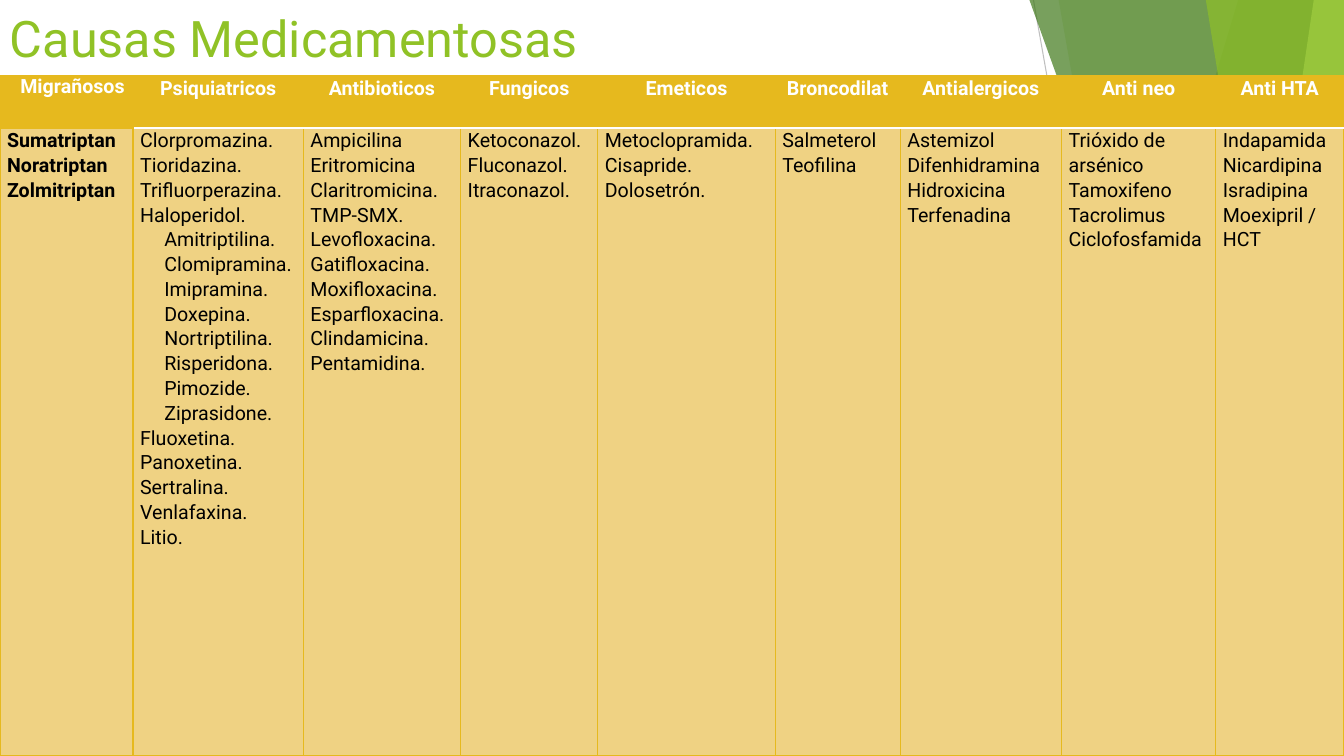
import pptx
import pptx.dml.color
import pptx.enum.shapes
import pptx.enum.text
import pptx.oxml
import pptx.oxml.ns
import pptx.util
from pptx.util import Inches

FONT = "Roboto"
GREEN, GOLD, PALE_GOLD, WHITE, BLACK = "90C226", "E6B91E", "EFD283", "FFFFFF", "000000"
SLIDE_WIDTH, SLIDE_HEIGHT = 13.33, 7.5
INDENTED = range(4, 12)

BANDS = [
    (12.28, 10.04, "90C226", 30),
    (10.5, 11.83, "90C226", 20),
    (10.21, 12.91, "3F7819", 70),
    (13.03, 11.92, "C0E474", 70),
    (11.96, 13.18, "90C226", 65),
]

COLUMNS = [
    ("Migrañosos", 1.32, ["Sumatriptan", "Noratriptan", "Zolmitriptan"]),
    ("Psiquiatricos", 1.69, [
        "Clorpromazina.", "Tioridazina.", "Trifluorperazina.", "Haloperidol.",
        "Amitriptilina.", "Clomipramina.", "Imipramina.", "Doxepina.",
        "Nortriptilina.", "Risperidona.", "Pimozide.", "Ziprasidone.",
        "Fluoxetina.", "Panoxetina.", "Sertralina.", "Venlafaxina.", "Litio."]),
    ("Antibioticos", 1.56, [
        "Ampicilina", "Eritromicina", "Claritromicina.", "TMP-SMX.",
        "Levofloxacina.", "Gatifloxacina.", "Moxifloxacina.",
        "Esparfloxacina.", "Clindamicina.", "Pentamidina."]),
    ("Fungicos", 1.36, ["Ketoconazol.", "Fluconazol.", "Itraconazol."]),
    ("Emeticos", 1.76, ["Metoclopramida.", "Cisapride.", "Dolosetrón."]),
    ("Broncodilat", 1.24, ["Salmeterol", "Teofilina"]),
    ("Antialergicos", 1.6, ["Astemizol", "Difenhidramina", "Hidroxicina", "Terfenadina"]),
    ("Anti neo", 1.53, ["Trióxido de arsénico", "Tamoxifeno", "Tacrolimus", "Ciclofosfamida"]),
    ("Anti HTA", 1.27, ["Indapamida", "Nicardipina", "Isradipina", "Moexipril / HCT"]),
]


def rgb(color):
    return pptx.dml.color.RGBColor.from_string(color)


def add_element(parent, tag, **attributes):
    element = pptx.oxml.ns.qn(tag)
    child = parent.makeelement(element, attributes)
    parent.append(child)
    return child


def style_paragraph(paragraph, size, color, bold=False):
    paragraph.font.name = FONT
    paragraph.font.size = pptx.util.Pt(size)
    paragraph.font.bold = bold
    paragraph.font.color.rgb = rgb(color)


def add_line(slide, start, end, color, width):
    line = slide.shapes.add_connector(
        pptx.enum.shapes.MSO_CONNECTOR.STRAIGHT,
        *(Inches(value) for value in start + end))
    line.line.color.rgb = rgb(color)
    line.line.width = pptx.util.Pt(width)
    add_element(line._element.spPr, "a:effectLst")


def add_band(slide, top_left, bottom_left, color, opacity):
    builder = slide.shapes.build_freeform(Inches(top_left), 0)
    corners = [(SLIDE_WIDTH, 0), (SLIDE_WIDTH, SLIDE_HEIGHT), (bottom_left, SLIDE_HEIGHT)]
    builder.add_line_segments([(Inches(x), Inches(y)) for x, y in corners], close=True)
    shape = builder.convert_to_shape()
    shape.shadow.inherit = False
    shape.line.fill.background()
    shape.fill.solid()
    shape.fill.fore_color.rgb = rgb(color)
    solid_color = shape._element.spPr.find(".//" + pptx.oxml.ns.qn("a:srgbClr"))
    add_element(solid_color, "a:alpha", val=str(opacity * 1000))


def add_title(slide, text):
    frame = slide.shapes.add_textbox(0, 0, Inches(7.91), Inches(0.75)).text_frame
    frame.word_wrap = True
    frame.vertical_anchor = pptx.enum.text.MSO_ANCHOR.MIDDLE
    frame.text = text
    style_paragraph(frame.paragraphs[0], 36, GREEN)


def set_borders(cell, **special):
    properties = cell._tc.get_or_add_tcPr()
    for position, side in enumerate(("L", "R", "T", "B")):
        color, width = special.get(side, (GOLD, 1))
        border = properties.makeelement(
            pptx.oxml.ns.qn("a:ln" + side), {"w": str(pptx.util.Pt(width))})
        fill = add_element(border, "a:solidFill")
        add_element(fill, "a:srgbClr", val=color)
        properties.insert(position, border)


def fill_cell(cell, lines, fill, color, bold):
    cell.margin_left = cell.margin_right = Inches(0.07)
    cell.margin_top = cell.margin_bottom = 0
    cell.fill.solid()
    cell.fill.fore_color.rgb = rgb(fill)
    cell.text = "\n".join(lines)
    for paragraph in cell.text_frame.paragraphs:
        style_paragraph(paragraph, 14, color, bold)
        paragraph.line_spacing = 1.07


def indent(paragraph, length):
    paragraph._p.get_or_add_pPr().set("marL", str(Inches(length)))


def add_drug_table(slide):
    table = slide.shapes.add_table(
        2, len(COLUMNS), 0, Inches(0.75), Inches(SLIDE_WIDTH), Inches(6.75)).table
    table.rows[0].height = Inches(0.52)
    table.rows[1].height = Inches(6.23)
    for index, (heading, width, drugs) in enumerate(COLUMNS):
        table.columns[index].width = Inches(width)
        header, body = table.cell(0, index), table.cell(1, index)
        fill_cell(header, [heading], GOLD, WHITE, True)
        header.text_frame.paragraphs[0].alignment = pptx.enum.text.PP_ALIGN.CENTER
        fill_cell(body, drugs, PALE_GOLD, BLACK, index == 0)
        divider = (GOLD, 1) if index == 0 else (WHITE, 1.5)
        set_borders(header, B=divider)
        set_borders(body, T=divider,
                    L=(GOLD, 1.5 if index == 1 else 1),
                    R=(GOLD, 1.5 if index == 0 else 1))
    first_heading = table.cell(0, 0).text_frame.paragraphs[0]
    first_heading.line_spacing = 1.0
    indent(first_heading, 0.12)
    psychiatric = table.cell(1, 1).text_frame.paragraphs
    for row in INDENTED:
        indent(psychiatric[row], 0.24)


def main():
    presentation = pptx.Presentation()
    presentation.slide_width = Inches(SLIDE_WIDTH)
    presentation.slide_height = Inches(SLIDE_HEIGHT)
    slide = presentation.slides.add_slide(presentation.slide_layouts[6])
    add_line(slide, (10.25, 0), (11.58, SLIDE_HEIGHT), "BFBFBF", 0.75)
    for band in BANDS:
        add_band(slide, *band)
    add_title(slide, "Causas Medicamentosas")
    add_drug_table(slide)
    presentation.save("out.pptx")


if __name__ == "__main__":
    main()
